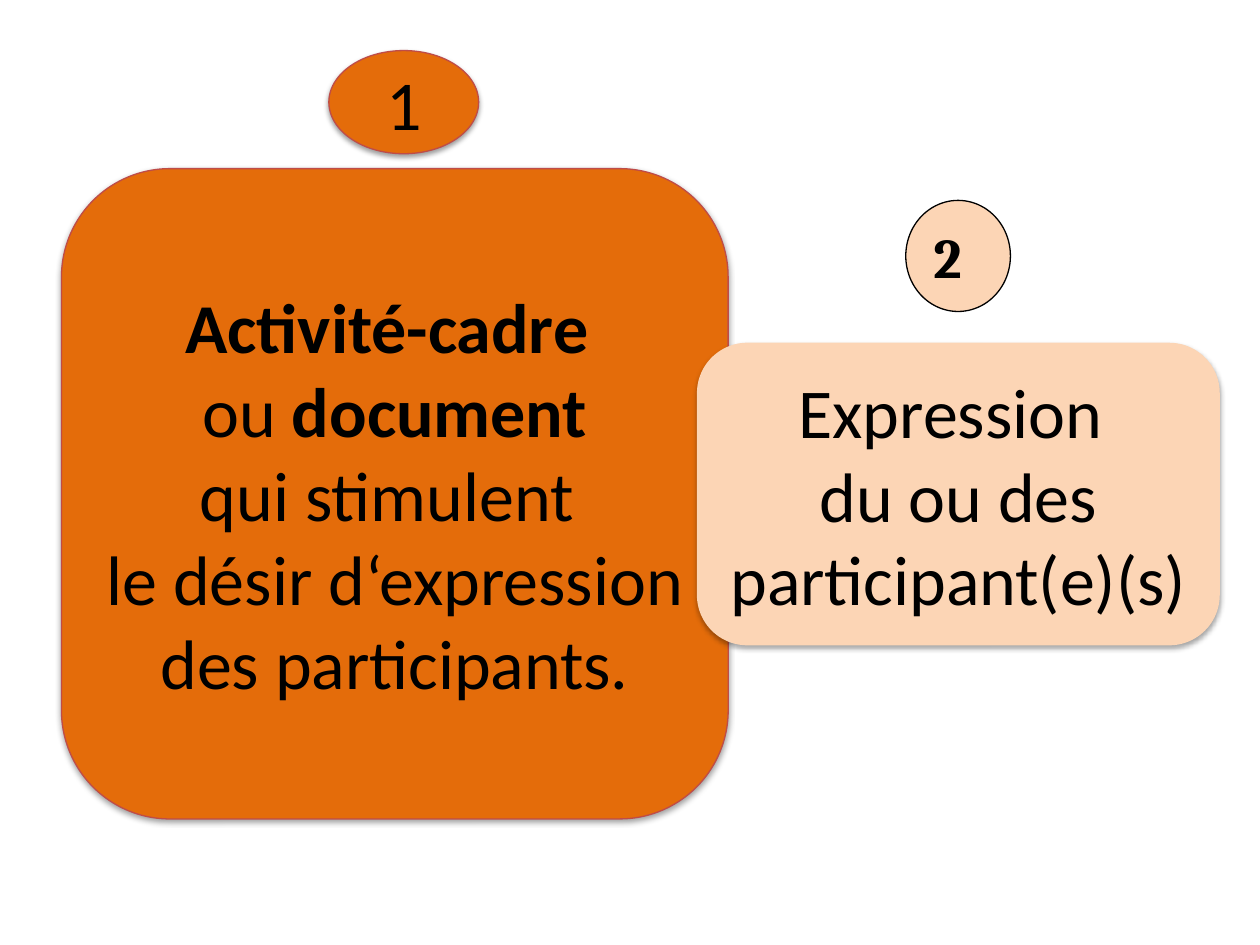
from dataclasses import dataclass
from typing import Optional

from lxml import etree
from pptx import Presentation
from pptx import util as u
from pptx.dml.color import RGBColor
from pptx.enum import shapes, text
from pptx.oxml import ns

COLOURS = {
    "orange": "E46C0A",
    "peach": "FCD5B5",
    "red": "BF4C48",
    "black": "000000",
}
OVAL = shapes.MSO_SHAPE.OVAL
ROUNDED = shapes.MSO_SHAPE.ROUNDED_RECTANGLE


@dataclass(frozen=True)
class Span:
    words: str
    bold: bool = False


@dataclass(frozen=True)
class Panel:
    form: shapes.MSO_SHAPE
    left: float
    top: float
    width: float
    height: float
    fill: str
    lines: list[list[Span]]
    outline: Optional[str] = None
    shadow_opacity: int = 0
    shadow_distance: float = 0
    font: str = "Calibri"
    size: int = 40
    align: text.PP_ALIGN = text.PP_ALIGN.CENTER
    anchor: text.MSO_ANCHOR = text.MSO_ANCHOR.MIDDLE


PANELS = [
    Panel(OVAL, 6.63, 1.02, 3.02, 2.08, "orange", [[Span("1")]], "red", 38, 1.6),
    Panel(
        ROUNDED, 1.24, 3.4, 13.44, 13.11, "orange",
        [
            [Span("Activité-cadre ", True)],
            [Span("ou"), Span(" document", True)],
            [Span("qui stimulent ")],
            [Span("le désir d‘expression ")],
            [Span("des participants.")],
        ],
        "red", 38, 1.6,
    ),
    Panel(
        ROUNDED, 14.05, 6.91, 10.54, 6.1, "peach",
        [[Span("Expression ")], [Span("du ou des")], [Span("participant(e)(s)")]],
        None, 35, 1.8,
    ),
    Panel(
        OVAL, 18.26, 4.04, 2.11, 2.24, "peach", [[Span("2", True)]], "black",
        font="Cambria", size=32,
        align=text.PP_ALIGN.LEFT, anchor=text.MSO_ANCHOR.TOP,
    ),
]


def colour(name: str) -> RGBColor:
    return RGBColor.from_string(COLOURS[name])


def add_shadow(box, opacity: int, distance: float) -> None:
    effects = box._element.spPr.find(ns.qn("a:effectLst"))
    shadow = etree.SubElement(
        effects, ns.qn("a:outerShdw"), blurRad=str(u.Pt(3.1)),
        dist=str(u.Pt(distance)), dir="5400000", rotWithShape="0",
    )
    tint = etree.SubElement(shadow, ns.qn("a:srgbClr"), val=COLOURS["black"])
    etree.SubElement(tint, ns.qn("a:alpha"), val=str(opacity * 1000))


def write_lines(frame, panel: Panel) -> None:
    frame.word_wrap = True
    frame.vertical_anchor = panel.anchor
    for index, line in enumerate(panel.lines):
        para = frame.add_paragraph() if index else frame.paragraphs[0]
        para.alignment = panel.align
        para.font.name = panel.font
        para.font.size = u.Pt(panel.size)
        para.font.color.rgb = colour("black")
        for span in line:
            run = para.add_run()
            run.text = span.words
            run.font.bold = span.bold


def draw_panel(page, panel: Panel) -> None:
    box = page.shapes.add_shape(
        panel.form, u.Cm(panel.left), u.Cm(panel.top),
        u.Cm(panel.width), u.Cm(panel.height),
    )
    box.fill.solid()
    box.fill.fore_color.rgb = colour(panel.fill)
    if panel.outline:
        box.line.color.rgb = colour(panel.outline)
        box.line.width = u.Pt(0.75)
    else:
        box.line.fill.background()
    box.shadow.inherit = False
    if panel.shadow_opacity:
        add_shadow(box, panel.shadow_opacity, panel.shadow_distance)
    write_lines(box.text_frame, panel)


def main() -> None:
    deck = Presentation()
    deck.slide_width, deck.slide_height = u.Cm(25.4), u.Cm(19.05)
    page = deck.slides.add_slide(deck.slide_layouts[6])
    for panel in PANELS:
        draw_panel(page, panel)
    deck.save("out.pptx")


if __name__ == "__main__":
    main()
